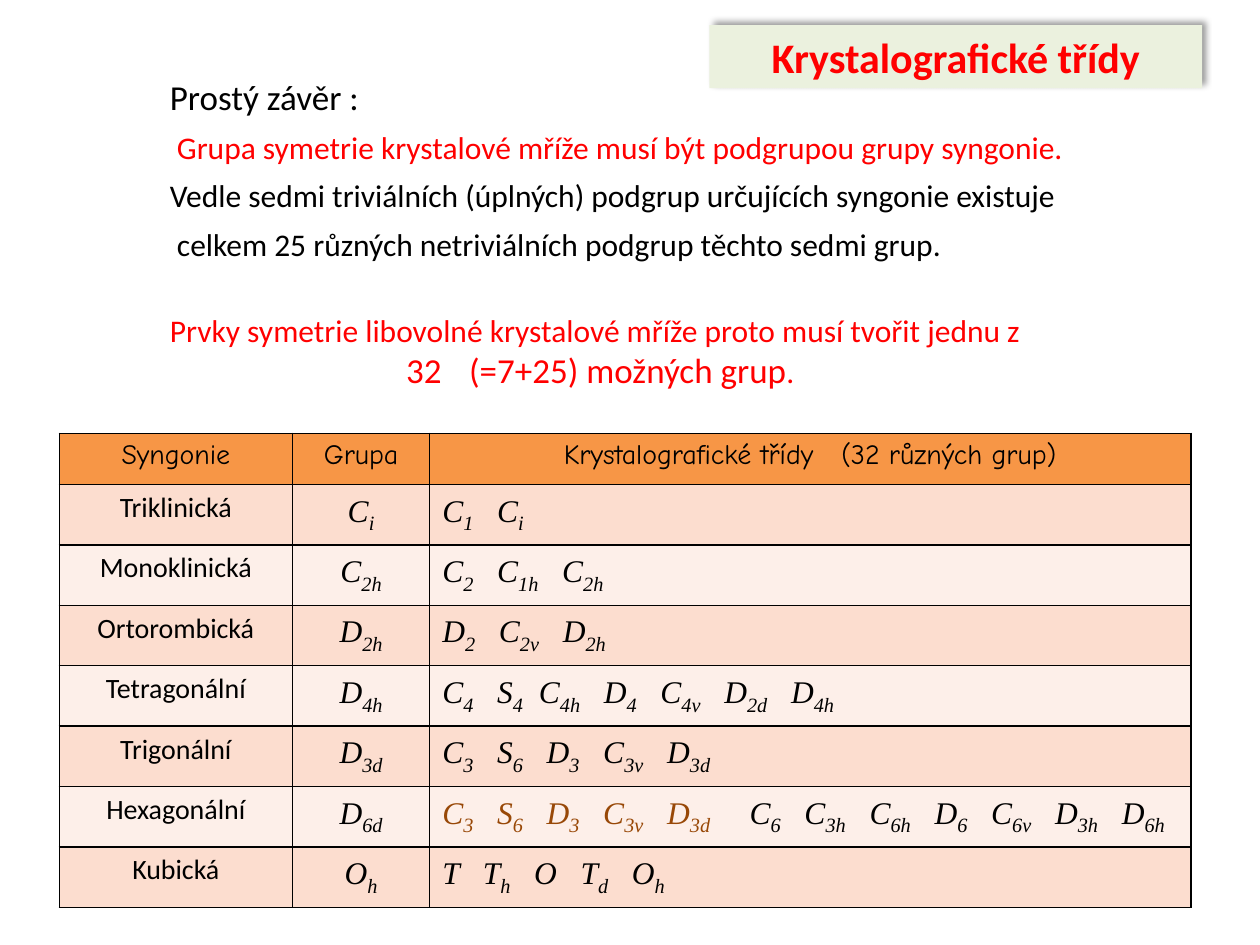
from itertools import groupby

from lxml import etree
from pptx import Presentation
from pptx.dml.color import RGBColor
from pptx.enum.shapes import MSO_SHAPE
from pptx.enum.text import MSO_ANCHOR, PP_ALIGN
from pptx.oxml import parse_xml
from pptx.oxml.ns import nsdecls, qn
from pptx.util import Pt

RECT = MSO_SHAPE.RECTANGLE
MIDDLE = MSO_ANCHOR.MIDDLE
LEFT, CENTER = PP_ALIGN.LEFT, PP_ALIGN.CENTER
BLACK = RGBColor(0, 0, 0)
RED = RGBColor(0xFF, 0, 0)
BROWN = RGBColor(0x98, 0x48, 0x07)
GREEN = RGBColor(0xEB, 0xF1, 0xDE)
ORANGE = RGBColor(0xF7, 0x96, 0x46)
BANDS = [RGBColor(0xFC, 0xDD, 0xCF), RGBColor(0xFD, 0xEF, 0xE9)]
SANS, COMIC, SERIF = "Calibri", "Comic Neue", "Times New Roman"

HEADS = ["Syngonie", "Grupa", "Krystalografické třídy   (32 různých grup)"]
ROWS = [
    ("Triklinická", "Ci", [("C1   Ci", BLACK)]),
    ("Monoklinická", "C2h", [("C2   C1h   C2h", BLACK)]),
    ("Ortorombická", "D2h", [("D2   C2v   D2h", BLACK)]),
    ("Tetragonální", "D4h", [("C4   S4  C4h   D4   C4v   D2d   D4h", BLACK)]),
    ("Trigonální", "D3d", [("C3   S6   D3   C3v   D3d", BLACK)]),
    ("Hexagonální", "D6d", [
        ("C3   S6   D3   C3v   D3d     ", BROWN),
        ("C6   C3h   C6h   D6   C6v   D3h   D6h", BLACK)]),
    ("Kubická", "Oh", [("T   Th   O   Td   Oh", BLACK)]),
]


def style(par, size, color, name=SANS, align=LEFT):
    par.alignment = align
    par.font.size = Pt(size)
    par.font.name = name
    par.font.color.rgb = color


def add_frame(slide, box):
    frame = slide.shapes.add_textbox(*map(Pt, box)).text_frame
    frame.word_wrap = True
    return frame


def add_intro(slide, box):
    frame = add_frame(slide, box)
    lines = [
        ("Prostý závěr :", 20, BLACK),
        (" Grupa symetrie krystalové mříže musí být podgrupou grupy syngonie.", 18, RED),
        ("Vedle sedmi triviálních (úplných) podgrup určujících syngonie existuje", 18, BLACK),
        (" celkem 25 různých netriviálních podgrup těchto sedmi grup.", 18, BLACK),
    ]
    for i, (text, size, color) in enumerate(lines):
        par = frame.add_paragraph() if i else frame.paragraphs[0]
        par.text = text
        par.space_after = Pt(6)
        style(par, size, color)


def add_result(slide, box):
    frame = add_frame(slide, box)
    par = frame.paragraphs[0]
    par.text = "Prvky symetrie libovolné krystalové mříže proto musí tvořit jednu z"
    style(par, 18, RED)
    par = frame.add_paragraph()
    style(par, 20, RED, align=CENTER)
    for text, size in [("(=7+25) možných grup", 20), (".", 18)]:
        run = par.add_run()
        run.text = text
        run.font.size = Pt(size)
        run.font.name = SANS
        run.font.color.rgb = RED
    props = par._p.get_or_add_pPr()
    props.set("marL", str(Pt(36)))
    props.set("indent", str(Pt(-36)))
    mark = parse_xml(f'<a:buAutoNum {nsdecls("a")} type="arabicPlain" startAt="32"/>')
    props.insert(0, mark)


def add_title(slide, box):
    shape = slide.shapes.add_shape(RECT, *map(Pt, box))
    shape.fill.solid()
    shape.fill.fore_color.rgb = GREEN
    shape.line.fill.background()
    shape.shadow.inherit = False
    shape._element.spPr.find(qn("a:effectLst")).append(parse_xml(
        f'<a:outerShdw {nsdecls("a")} blurRad="{Pt(4)}" dist="{Pt(3)}" '
        'dir="18900000" algn="bl" rotWithShape="0"><a:srgbClr val="000000">'
        '<a:alpha val="40000"/></a:srgbClr></a:outerShdw>'))
    frame = shape.text_frame
    frame.word_wrap = True
    frame.vertical_anchor = MIDDLE
    par = frame.paragraphs[0]
    par.text = "Krystalografické třídy"
    style(par, 24, RED, align=CENTER)
    par.font.bold = True


def paint(cell, color):
    props = cell._tc.get_or_add_tcPr()
    for side in "LRTB":
        line = etree.SubElement(props, qn(f"a:ln{side}"), w=str(Pt(1)))
        fill = etree.SubElement(line, qn("a:solidFill"))
        etree.SubElement(fill, qn("a:srgbClr"), val=str(BLACK))
    cell.fill.solid()
    cell.fill.fore_color.rgb = color


def write_word(cell, text, name):
    par = cell.text_frame.paragraphs[0]
    par.text = text
    style(par, 16, BLACK, name, CENTER)


def write_group(cell, parts, align):
    par = cell.text_frame.paragraphs[0]
    style(par, 18, BLACK, SERIF, align)
    par.font.italic = True
    for text, color in parts:
        for base, chars in groupby(text, lambda c: c.isupper() or c == " "):
            run = par.add_run()
            run.text = "".join(chars)
            font = run.font
            font.name = SERIF
            font.italic = True
            font.size = Pt(18 if base else 20)
            font.color.rgb = color
            if not base:
                run._r.get_or_add_rPr().set("baseline", "-25000")


def add_groups(slide, box):
    count = len(ROWS) + 1
    table = slide.shapes.add_table(count, len(HEADS), *map(Pt, box)).table
    table.first_row = table.horz_banding = False
    for col, width in zip(table.columns, [133.2, 78.5, 434.9]):
        col.width = Pt(width)
    for row in table.rows:
        row.height = Pt(box[3] / count)
    for i, text in enumerate(HEADS):
        paint(table.cell(0, i), ORANGE)
        write_word(table.cell(0, i), text, COMIC)
    for i, (name, group, parts) in enumerate(ROWS):
        cells = table.rows[i + 1].cells
        for cell in cells:
            paint(cell, BANDS[i % 2])
        write_word(cells[0], name, SANS)
        write_group(cells[1], [(group, BLACK)], CENTER)
        write_group(cells[2], parts, LEFT)


def main():
    deck = Presentation()
    deck.slide_width, deck.slide_height = Pt(720), Pt(540)
    slide = deck.slides.add_slide(deck.slide_layouts[6])
    add_intro(slide, (90, 39.6, 568, 121.7))
    add_result(slide, (90, 174.2, 506, 75))
    add_groups(slide, (33.9, 247.6, 646.6, 233.6))
    add_title(slide, (405.4, 14.4, 281.5, 36))
    deck.save("out.pptx")


if __name__ == "__main__":
    main()
